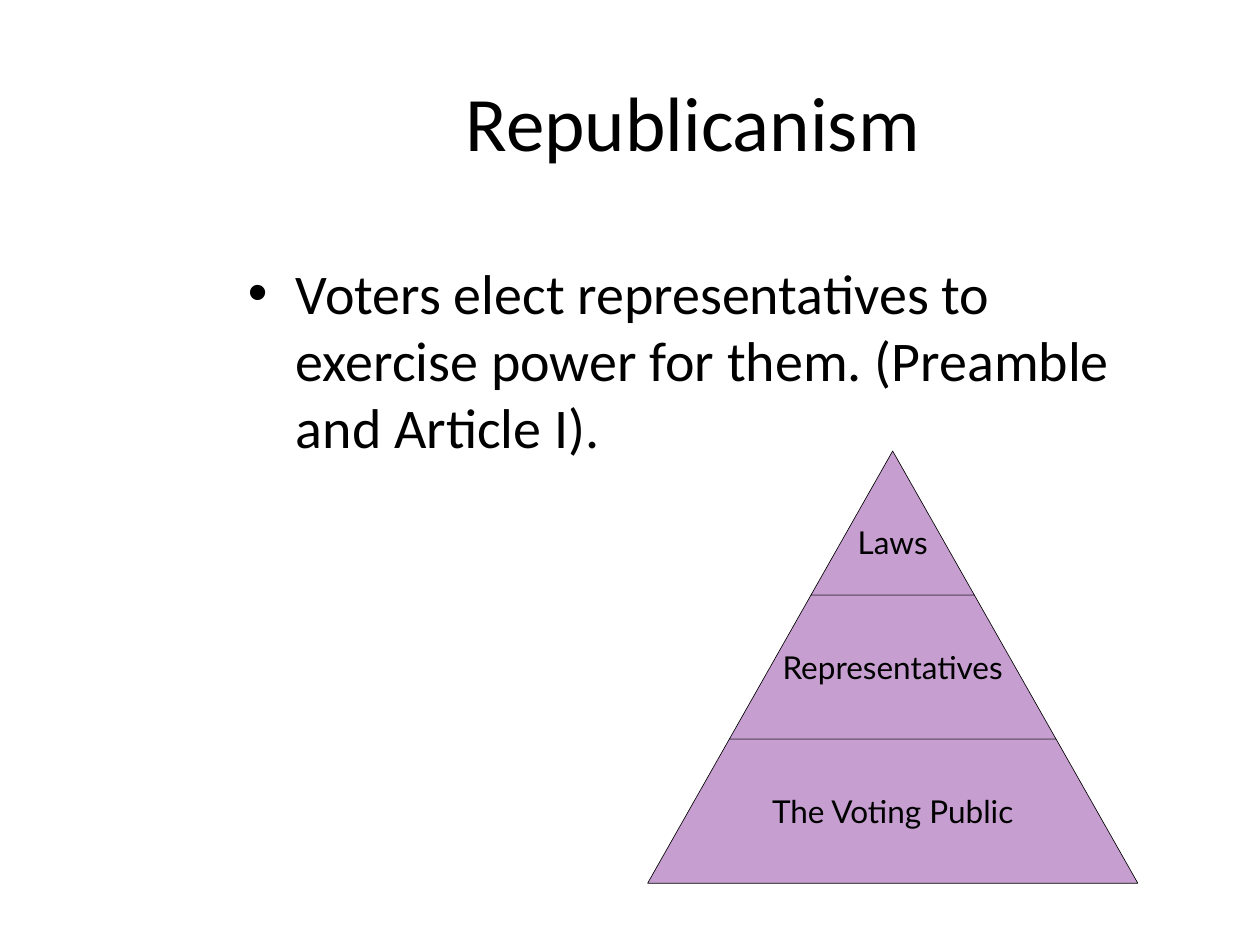
from pptx import Presentation
from pptx.dml.color import RGBColor
from pptx.enum.text import MSO_ANCHOR, PP_ALIGN
from pptx.oxml.ns import qn
from pptx.util import Inches, Pt
from lxml import etree

BLACK = RGBColor(0x00, 0x00, 0x00)
LILAC = RGBColor(0xC6, 0x9E, 0xD0)
CENTER = PP_ALIGN.CENTER
MIDDLE = MSO_ANCHOR.MIDDLE


def write_text(tf, text, font, size):
    """Fill a frame with one paragraph and return that paragraph."""
    tf.text = text
    p = tf.paragraphs[0]
    r = p.runs[0]
    r.font.name = font
    r.font.size = Pt(size)
    r.font.color.rgb = BLACK
    return p


def add_title(s, left, top, width, height):
    tf = s.shapes.add_textbox(left, top, width, height).text_frame
    tf.word_wrap = True
    tf.vertical_anchor = MIDDLE
    write_text(tf, "Republicanism", "Calibri", 44).alignment = CENTER


def add_body(s, left, top, width, height):
    tf = s.shapes.add_textbox(left, top, width, height).text_frame
    tf.word_wrap = True
    p = write_text(
        tf,
        "Voters elect representatives to exercise power for them. "
        "(Preamble and Article I).",
        "Calibri", 32)
    p.space_before = Pt(6.4)
    # Hanging bullet
    pPr = p._p.get_or_add_pPr()
    pPr.set("marL", str(Inches(0.38)))
    pPr.set("indent", str(-Inches(0.38)))
    etree.SubElement(pPr, qn("a:buFont")).set("typeface", "Arial")
    etree.SubElement(pPr, qn("a:buChar")).set("char", "•")


def add_pyramid(s, left, top, width, height, labels):
    """Stack equal-height tiers, widening evenly from the apex."""
    center = left + width / 2
    count = len(labels)
    for i, label in enumerate(labels):
        y1, y2 = (top + height * n / count for n in (i, i + 1))
        half1, half2 = (width / 2 * n / count for n in (i, i + 1))
        points = [(center + half1, y1), (center + half2, y2),
                  (center - half2, y2)]
        builder = s.shapes.build_freeform(round(center - half1), round(y1))
        builder.add_line_segments([(round(x), round(y)) for x, y in points])
        sp = builder.convert_to_shape()
        sp.shadow.inherit = False
        sp.fill.solid()
        sp.fill.fore_color.rgb = LILAC
        sp.line.color.rgb = BLACK
        sp.line.width = Pt(0.37)

        tf = sp.text_frame
        tf.word_wrap = False
        tf.vertical_anchor = MIDDLE
        write_text(tf, label, "Lato", 18).alignment = CENTER
        if i == 0:
            # Lower the apex label to where the triangle is wide enough
            tf.margin_top = Inches(0.35)


def main():
    prs = Presentation()
    prs.slide_width, prs.slide_height = Inches(10), Inches(7.5)
    s = prs.slides.add_slide(prs.slide_layouts[6])

    add_pyramid(s, Inches(5.14), Inches(3.58), Inches(3.89), Inches(3.43),
                ["Laws", "Representatives", "The Voting Public"])
    add_title(s, Inches(1.5), Inches(0.33), Inches(8), Inches(1.25))
    add_body(s, Inches(1.87), Inches(2), Inches(7.04), Inches(4.34))

    prs.save("out.pptx")


if __name__ == "__main__":
    main()
